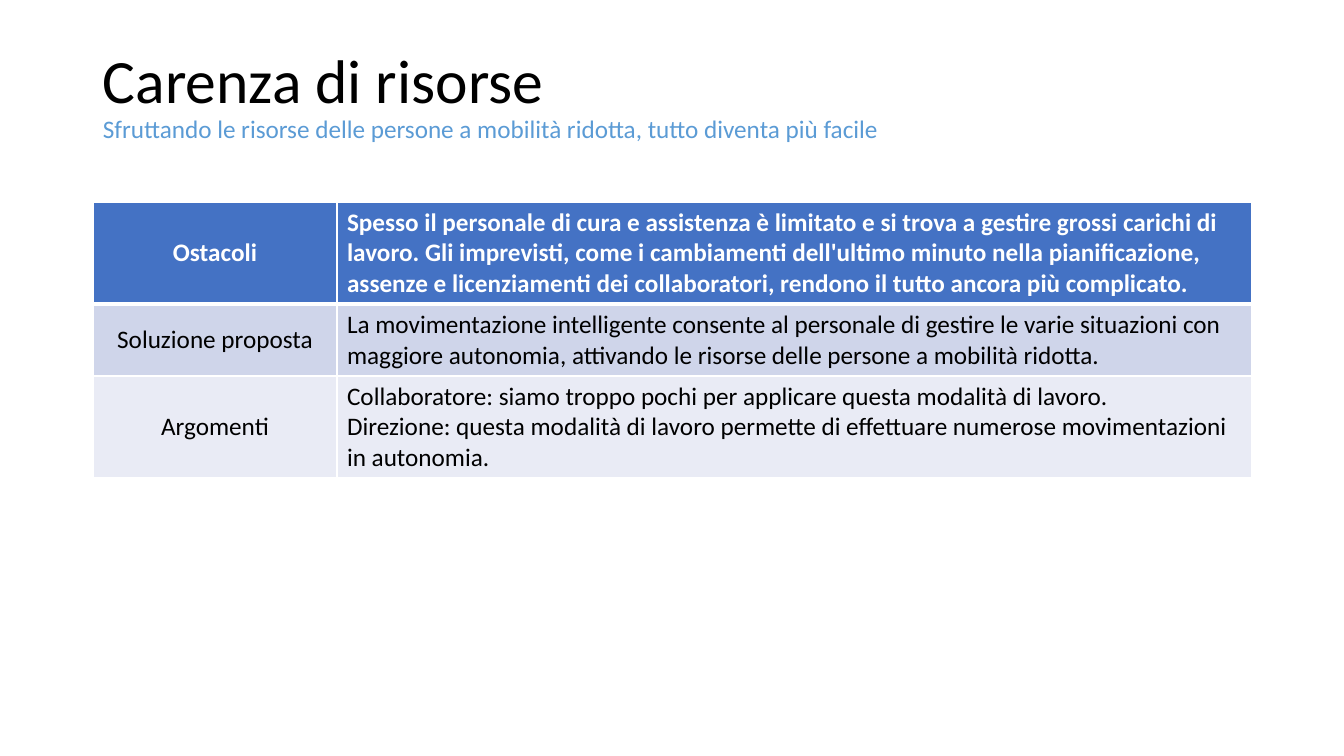
from lxml.etree import SubElement
from pptx import Presentation
from pptx.dml.color import RGBColor
from pptx.enum.text import MSO_ANCHOR, PP_ALIGN
from pptx.oxml.ns import qn
from pptx.util import Pt

PX = 9071
SLIDE = (1344, 756)
TITLE_BOX = (93, 40, 1159, 146)
TITLE_INSET = 10
TITLE_LINES = [
    ("Carenza di risorse", 44, "000000"),
    ("Sfruttando le risorse delle persone a mobilità ridotta, tutto diventa più facile", 18, "5B9BD5"),
]
TABLE_POS = (93, 202)
COLS = (244, 915)
ROWS = [
    (102, "4472C4", "FFFFFF", True, 3, "Ostacoli", [
        "Spesso il personale di cura e assistenza è limitato e si trova a gestire grossi carichi di "
        "lavoro. Gli imprevisti, come i cambiamenti dell'ultimo minuto nella pianificazione, "
        "assenze e licenziamenti dei collaboratori, rendono il tutto ancora più complicato."]),
    (72, "CFD5EA", "000000", False, 1, "Soluzione proposta", [
        "La movimentazione intelligente consente al personale di gestire le varie situazioni con "
        "maggiore autonomia, attivando le risorse delle persone a mobilità ridotta."]),
    (102, "E9EBF5", "000000", False, 1, "Argomenti", [
        "Collaboratore: siamo troppo pochi per applicare questa modalità di lavoro.",
        "Direzione: questa modalità di lavoro permette di effettuare numerose movimentazioni "
        "in autonomia."]),
]


def px(*values):
    return [v * PX for v in values]


def rgb(value):
    return RGBColor.from_string(value)


def add_run(p, text, size, color, bold=False):
    r = p.add_run()
    r.text = text
    for name, value in {"name": "Calibri", "size": Pt(size), "bold": bold}.items():
        setattr(r.font, name, value)
    r.font.color.rgb = rgb(color)


def set_borders(cell, bottom, top):
    tcPr = cell._tc.get_or_add_tcPr()
    widths = {"a:lnL": 1, "a:lnR": 1, "a:lnT": top, "a:lnB": bottom}
    for tag, width in widths.items():
        ln = SubElement(tcPr, qn(tag), w=str(Pt(width)))
        SubElement(SubElement(ln, qn("a:solidFill")), qn("a:srgbClr"), val="FFFFFF")


def add_title(slide):
    tf = slide.shapes.add_textbox(*px(*TITLE_BOX)).text_frame
    formats = {"word_wrap": True, "vertical_anchor": MSO_ANCHOR.TOP, "margin_top": TITLE_INSET * PX}
    for name, value in formats.items():
        setattr(tf, name, value)
    p = tf.paragraphs[0]
    p.line_spacing = 0.9
    for i, line in enumerate(TITLE_LINES):
        if i:
            p.add_line_break()
        add_run(p, *line)


def add_grid(slide):
    size = (sum(COLS), sum(row[0] for row in ROWS))
    table = slide.shapes.add_table(len(ROWS), len(COLS), *px(*TABLE_POS, *size)).table
    for col, width in zip(table.columns, px(*COLS)):
        col.width = width
    top = 1
    for i, (height, fill, color, bold, bottom, label, texts) in enumerate(ROWS):
        table.rows[i].height = height * PX
        for j, (lines, align) in enumerate([([label], PP_ALIGN.CENTER), (texts, PP_ALIGN.LEFT)]):
            cell = table.cell(i, j)
            cell.vertical_anchor = MSO_ANCHOR.MIDDLE
            set_borders(cell, bottom, top)
            cell.fill.solid()
            cell.fill.fore_color.rgb = rgb(fill)
            tf = cell.text_frame
            for k, text in enumerate(lines):
                p = tf.add_paragraph() if k else tf.paragraphs[0]
                p.alignment = align
                add_run(p, text, 18, color, bold)
        top = bottom


def main():
    prs = Presentation()
    prs.slide_width, prs.slide_height = px(*SLIDE)
    slide = prs.slides.add_slide(prs.slide_layouts[6])
    add_title(slide)
    add_grid(slide)
    prs.save("out.pptx")


if __name__ == "__main__":
    main()
